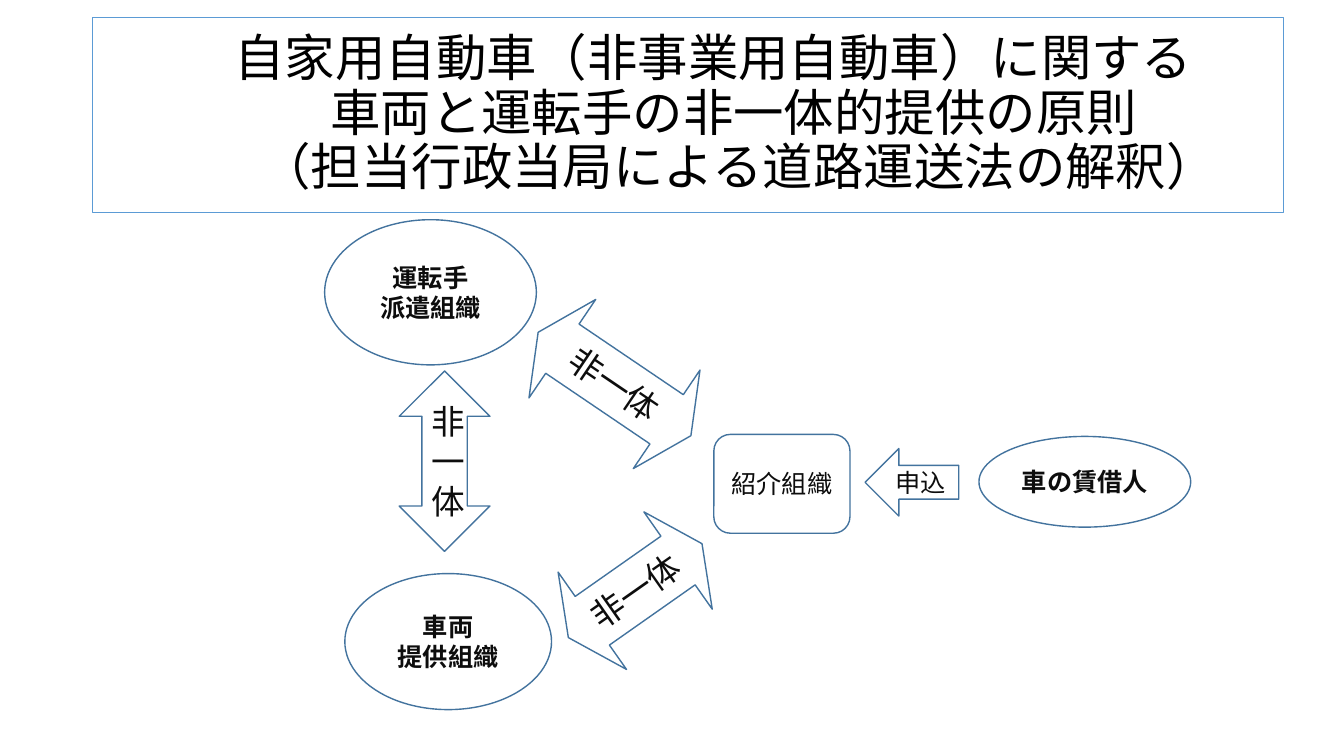
from dataclasses import dataclass

from pptx import Presentation
from pptx import util as u
from pptx.dml.color import RGBColor
from pptx.enum import shapes, text

KIND = shapes.MSO_SHAPE


@dataclass(frozen=True)
class Theme:
    font: str = "Calibri"
    black: str = "000000"
    ink: str = "0D0D0D"
    edge: str = "43739E"
    frame: str = "5B9BD5"
    head: int = 36
    big: int = 24
    body: int = 18


THEME = Theme()


def add_box(slide, kind, box, lines, size=THEME.body, bold=False,
            ink=THEME.ink, edge=THEME.edge, width=1):
    """Add an unfilled, outlined shape with centred text."""
    shape = slide.shapes.add_shape(kind, *[u.Inches(n) for n in box])
    shape.shadow.inherit = False
    shape.fill.background()
    shape.line.color.rgb = RGBColor.from_string(edge)
    shape.line.width = u.Pt(width)
    frame = shape.text_frame
    frame.word_wrap = True
    frame.vertical_anchor = text.MSO_ANCHOR.MIDDLE
    frame.text = lines
    for para in frame.paragraphs:
        para.alignment = text.PP_ALIGN.CENTER
        for run in para.runs:
            font = run.font
            font.name = THEME.font
            font.size = u.Pt(size)
            font.bold = bold
            font.color.rgb = RGBColor.from_string(ink)
    return shape


def add_title(slide, box, lines, indents):
    """Add the framed title, each line with its own left indent."""
    shape = add_box(slide, KIND.RECTANGLE, box, "\n".join(lines), THEME.head,
                    ink=THEME.black, edge=THEME.frame, width=0.75)
    for para, indent in zip(shape.text_frame.paragraphs, indents):
        para.line_spacing = 0.9
        para._p.get_or_add_pPr().set("marL", str(u.Inches(indent)))


def add_group(slide, box, lines):
    """Add an oval for one of the parties."""
    add_box(slide, KIND.OVAL, box, lines, bold=True)


def add_split(slide, kind, box, angle=0):
    """Add a two-way arrow that marks two parties as separate."""
    arrow = add_box(slide, kind, box, "非一体", THEME.big)
    arrow.rotation = angle
    if angle:
        arrow.adjustments[1] = 0.246


def main():
    deck = Presentation()
    deck.slide_width, deck.slide_height = u.Inches(13.33), u.Inches(7.5)
    slide = deck.slides.add_slide(deck.slide_layouts[6])

    # Title
    add_title(slide, (0.92, 0.17, 11.81, 1.94),
              ("自家用自動車（非事業用自動車）に関する",
               "車両と運転手の非一体的提供の原則",
               "（担当行政当局による道路運送法の解釈）"),
              (0.5, 0.9, 1))

    # Parties
    add_group(slide, (3.22, 2.18, 2.1, 1.44), "運転手\n派遣組織")
    add_group(slide, (3.42, 5.69, 2.05, 1.35), "車両\n提供組織")
    add_group(slide, (9.71, 4.33, 2.1, 0.9), "車の賃借人")

    # Request to the agent
    add_box(slide, KIND.LEFT_ARROW, (8.58, 4.45, 0.93, 0.67), "申込")
    add_box(slide, KIND.ROUNDED_RECTANGLE, (7.08, 4.31, 1.35, 0.98), "紹介組織")

    # Separation between parties
    add_split(slide, KIND.LEFT_RIGHT_ARROW, (5.18, 3.22, 1.83, 1.18), 34.1)
    add_split(slide, KIND.LEFT_RIGHT_ARROW, (5.49, 5.27, 1.62, 1.18), 324.9)
    add_split(slide, KIND.UP_DOWN_ARROW, (3.96, 3.68, 0.9, 1.79))

    deck.save("out.pptx")


if __name__ == "__main__":
    main()
